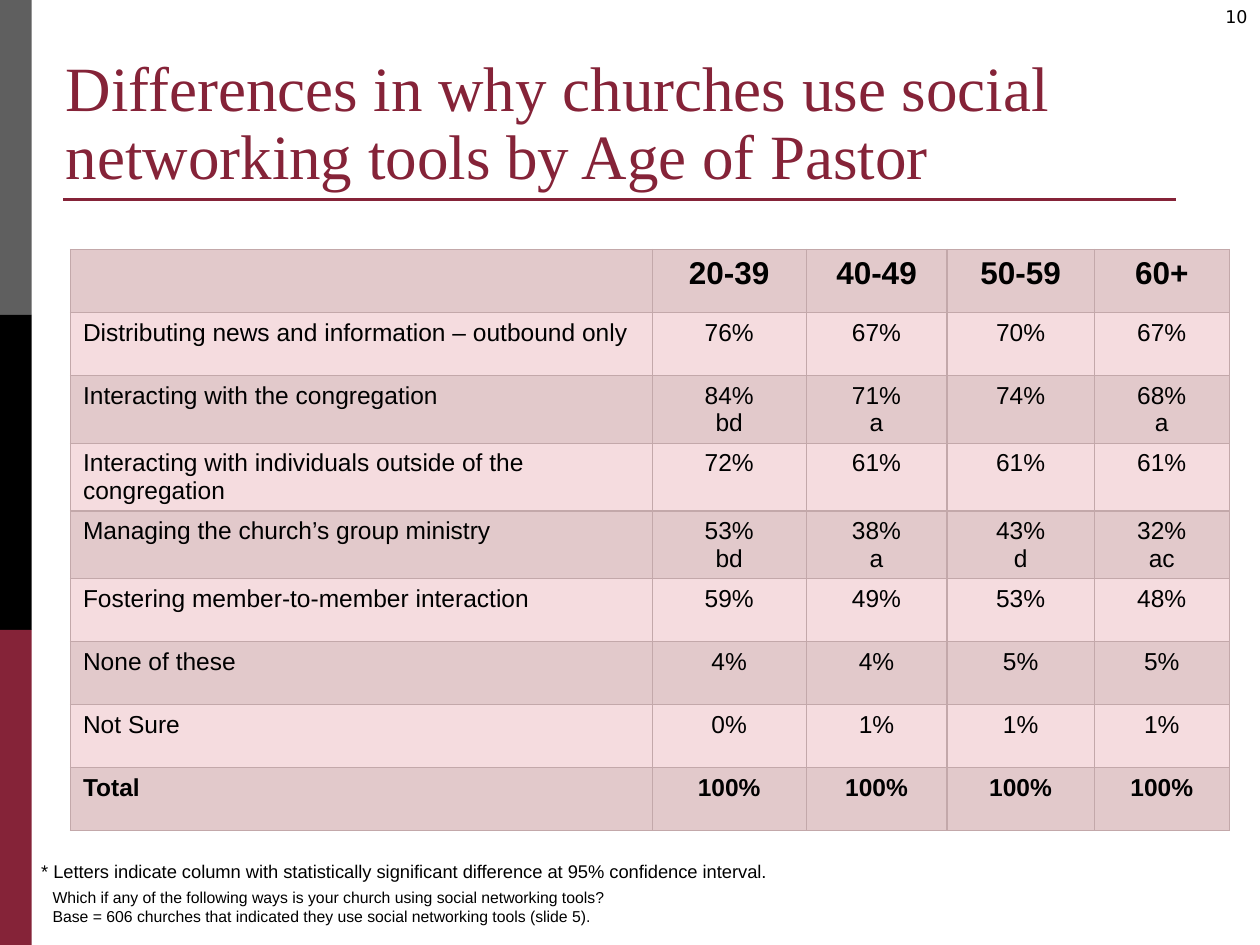
from lxml.etree import SubElement
from pptx import Presentation
from pptx.dml.color import RGBColor
from pptx.enum.shapes import MSO_CONNECTOR as Link, MSO_SHAPE as Kind
from pptx.enum.text import MSO_ANCHOR as Anchor, MSO_AUTO_SIZE as Auto, PP_ALIGN as Align
from pptx.oxml import parse_xml
from pptx.oxml.ns import nsdecls, qn
from pptx.util import Cm, Pt

# Content
TITLE = "Differences in why churches use social networking tools by Age of Pastor"
HEAD = ["", "20-39", "40-49", "50-59", "60+"]
ROWS = [
    ["Distributing news and information – outbound only", "76%", "67%", "70%", "67%"],
    ["Interacting with the congregation", "84%\nbd", "71%\na", "74%", "68%\na"],
    ["Interacting with individuals outside of the congregation", "72%", "61%", "61%", "61%"],
    ["Managing the church’s group ministry", "53%\nbd", "38%\na", "43%\nd", "32%\nac"],
    ["Fostering member-to-member interaction", "59%", "49%", "53%", "48%"],
    ["None of these", "4%", "4%", "5%", "5%"],
    ["Not Sure", "0%", "1%", "1%", "1%"],
    ["Total", "100%", "100%", "100%", "100%"],
]
# text, left, top, width, height, size, font, alignment
NOTES = [
    ("10", 24.13, 0, 1.27, 0.84, 10, "DejaVu Sans", Align.RIGHT),
    ("Which if any of the following ways is your church using social networking tools?\n"
     "Base = 606 churches that indicated they use social networking tools (slide 5).",
     0.81, 17.78, 19.46, 1.02, 9, "Arial", Align.LEFT),
    ("* Letters indicate column with statistically significant difference"
     " at 95% confidence interval.",
     0.58, 17.22, 15.88, 0.71, 10.5, "Arial", Align.LEFT),
]
WINE, BLACK, GREY = "852338", "000000", "5F5F5F"
BANDS = ["E2C9CB", "F5DCDF"]
EDGE = "C3A8AA"
COLS = [11.73, 3.1, 2.84, 2.97, 2.72]
ROW_H = 1.27
BAR_W, BAR_H = 0.64, 6.35


def paint(part, code):
    """Give a fill or a line one solid colour."""
    part.solid()
    part.fore_color.rgb = RGBColor.from_string(code)


def write(para, text, size, font="Arial", code=BLACK, bold=False, align=Align.LEFT):
    para.text = text
    para.alignment = align
    for run in para.runs:
        run.font.size, run.font.name, run.font.bold = Pt(size), font, bold
        paint(run.font.fill, code)


def frame(cell):
    """Draw the four borders of a table cell."""
    props = cell._tc.get_or_add_tcPr()
    for i, side in enumerate("LRTB"):
        props.insert(i, parse_xml(
            f'<a:ln{side} {nsdecls("a")} w="{Pt(0.75)}"><a:solidFill>'
            f'<a:srgbClr val="{EDGE}"/></a:solidFill></a:ln{side}>'))


deck = Presentation()
deck.slide_width, deck.slide_height = Cm(25.4), Cm(19.05)
slide = deck.slides.add_slide(deck.slide_layouts[5])
shapes = slide.shapes

# Side bars
for i, code in enumerate([GREY, BLACK, WINE]):
    bar = shapes.add_shape(Kind.RECTANGLE, 0, Cm(i * BAR_H), Cm(BAR_W), Cm(BAR_H))
    bar.shadow.inherit = False
    paint(bar.fill, code)
    bar.line.fill.background()

# Title and its rule
title = shapes.title
title.left, title.top, title.width, title.height = Cm(1.07), Cm(1.4), Cm(24.08), Cm(2.62)
title.text_frame.auto_size = Auto.NONE
title.text_frame.vertical_anchor = Anchor.BOTTOM
write(title.text_frame.paragraphs[0], TITLE, 36, "Times New Roman", WINE)
title.text_frame.paragraphs[0].line_spacing = 0.9

rule = shapes.add_connector(Link.STRAIGHT, Cm(1.27), Cm(4.02), Cm(23.7), Cm(4.02))
paint(rule.line.fill, WINE)
rule.line.width = Pt(1.5)
SubElement(rule._element.spPr, qn("a:effectLst"))

# Table
data = [HEAD] + ROWS
table = shapes.add_table(len(data), len(COLS), Cm(1.42), Cm(5.03),
                         Cm(sum(COLS)), Cm(ROW_H * len(data))).table
for col, wide in zip(table.columns, COLS):
    col.width = Cm(wide)
for r, row in enumerate(data):
    table.rows[r].height = Cm(ROW_H)
    for c, text in enumerate(row):
        cell = table.cell(r, c)
        paint(cell.fill, BANDS[r % 2])
        frame(cell)
        write(cell.text_frame.paragraphs[0], text, 18 if r == 0 else 14,
              bold=r in (0, len(ROWS)), align=Align.CENTER if c else Align.LEFT)

# Page number and footnotes
for text, x, y, w, h, size, font, align in NOTES:
    box = shapes.add_textbox(Cm(x), Cm(y), Cm(w), Cm(h)).text_frame
    box.word_wrap = True
    write(box.paragraphs[0], text, size, font, align=align)

deck.save("out.pptx")
